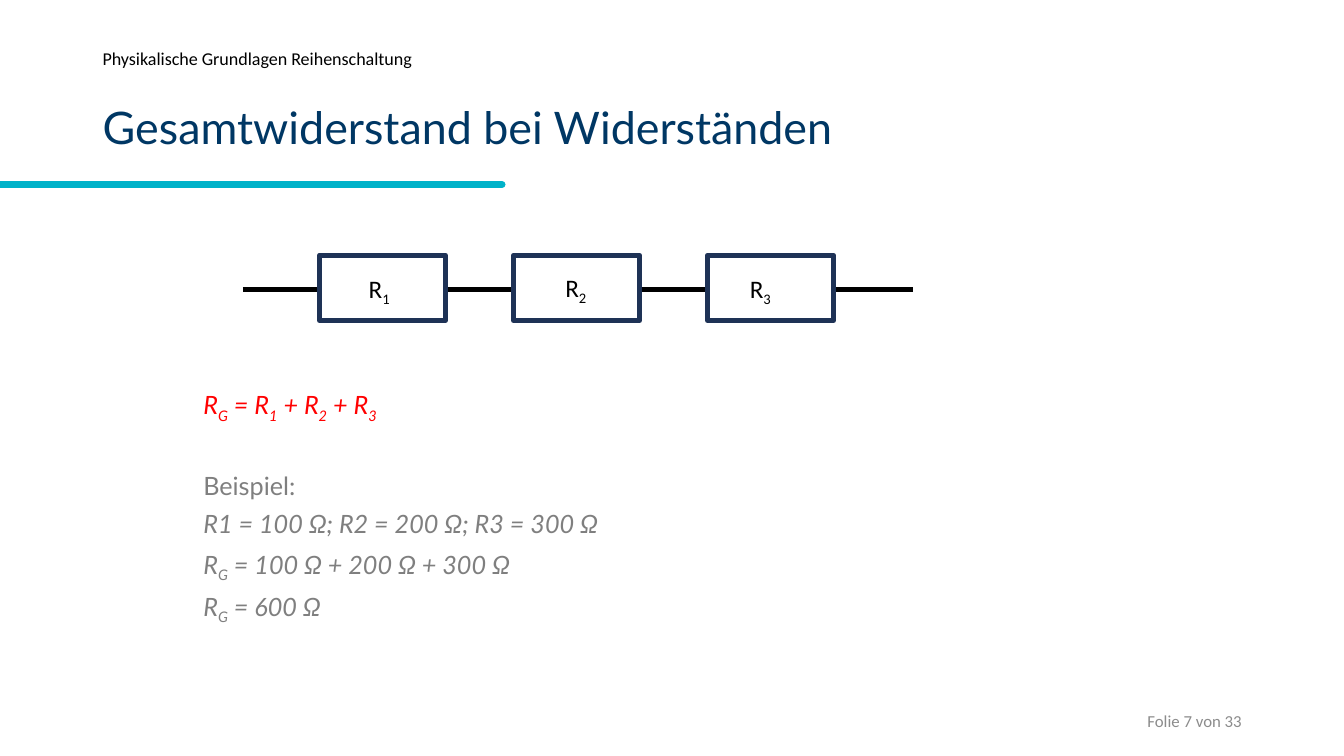
from dataclasses import dataclass

from lxml import etree
from pptx import Presentation
from pptx.dml.color import RGBColor
from pptx.enum.shapes import MSO_CONNECTOR, MSO_SHAPE
from pptx.enum.text import MSO_ANCHOR, MSO_AUTO_SIZE, PP_ALIGN
from pptx.oxml.ns import qn
from pptx.util import Pt

STRAIGHT = MSO_CONNECTOR.STRAIGHT
RECT = MSO_SHAPE.RECTANGLE
TOP, MIDDLE = MSO_ANCHOR.TOP, MSO_ANCHOR.MIDDLE
LEFT, RIGHT = PP_ALIGN.LEFT, PP_ALIGN.RIGHT
NO_FIT = MSO_AUTO_SIZE.NONE

NAVY, TEAL, RED, GREY = "003764", "00B2C9", "FF0000", "7F7F7F"
BLACK, WHITE, OUTLINE, FOOTER = "000000", "FFFFFF", "1E3256", "8C8C8C"


@dataclass
class Resistor:
    label: str
    label_x: float
    label_y: float


@dataclass
class Line:
    text: str
    color: str = GREY
    italic: bool = True
    before: float = 10


RESISTORS = [
    Resistor("R_1", 256.3, 191.5),
    Resistor("R_2", 396.7, 190.8),
    Resistor("R_3", 528.5, 191.5),
]
RESISTOR_X, RESISTOR_Y, RESISTOR_PITCH = 228.2, 182.2, 138.6
RESISTOR_W, RESISTOR_H = 90, 46.8

CALCULATION = [
    Line("R_G_ = R_1_ + R_2_ + R_3", RED, before=0),
    Line("Beispiel:", italic=False, before=40),
    Line("R1 = 100 Ω; R2 = 200 Ω; R3 = 300 Ω"),
    Line("R_G_ = 100 Ω + 200 Ω + 300 Ω"),
    Line("R_G_ = 600 Ω"),
]


def rgb(color: str) -> RGBColor:
    return RGBColor.from_string(color)


def place(sp, x: float, y: float, w: float, h: float) -> None:
    sp.left, sp.top, sp.width, sp.height = Pt(x), Pt(y), Pt(w), Pt(h)


def write(p, text: str, *, size: float, color: str, font: str = "Calibri",
          italic: bool = False, align=LEFT, spacing: float = 1,
          before: float = 0) -> None:
    p.alignment, p.line_spacing, p.space_before = align, spacing, Pt(before)
    for i, part in enumerate(text.split("_")):
        r = p.add_run()
        r.text = part
        r.font.name, r.font.size, r.font.italic = font, Pt(size), italic
        r.font.color.rgb = rgb(color)
        if i % 2:
            r._r.get_or_add_rPr().set("baseline", "-25000")


def add_box(s, x: float, y: float, w: float, h: float, anchor=TOP):
    sp = s.shapes.add_textbox(Pt(x), Pt(y), Pt(w), Pt(h))
    tf = sp.text_frame
    tf.word_wrap, tf.vertical_anchor = True, anchor
    return tf


def add_line(s, x1: float, x2: float, y: float, color: str, width: float,
             cap: str = "flat") -> None:
    c = s.shapes.add_connector(STRAIGHT, Pt(x1), Pt(y), Pt(x2), Pt(y))
    c.line.color.rgb, c.line.width = rgb(color), Pt(width)
    spPr = c._element.spPr
    spPr.find(qn("a:ln")).set("cap", cap)
    etree.SubElement(spPr, qn("a:effectLst"))


def add_header(s) -> None:
    add_line(s, -1.4, 358.6, 131.8, TEAL, 5, "rnd")
    title = s.shapes.title
    place(title, 66.2, 57.6, 828, 70.6)
    tf = title.text_frame
    tf.auto_size, tf.vertical_anchor = NO_FIT, MIDDLE
    write(tf.paragraphs[0], "Gesamtwiderstand bei Widerständen", size=32,
          color=NAVY, font="Lato", spacing=0.9)
    tf = add_box(s, 66.2, 33.1, 758.9, 20.2)
    write(tf.paragraphs[0], "Physikalische Grundlagen Reihenschaltung",
          size=12.9, color=BLACK, spacing=0.8)


def add_circuit(s) -> None:
    add_line(s, 173.5, 652.3, 206.6, BLACK, 3.5)
    for i, resistor in enumerate(RESISTORS):
        sp = s.shapes.add_shape(RECT, Pt(RESISTOR_X + i * RESISTOR_PITCH),
                                Pt(RESISTOR_Y), Pt(RESISTOR_W), Pt(RESISTOR_H))
        sp.shadow.inherit = False
        sp.fill.solid()
        sp.fill.fore_color.rgb = rgb(WHITE)
        sp.line.color.rgb, sp.line.width = rgb(OUTLINE), Pt(3.5)
    for resistor in RESISTORS:
        tf = add_box(s, resistor.label_x, resistor.label_y, 70.6, 28.8)
        write(tf.paragraphs[0], resistor.label, size=18, color=BLACK)


def add_calculation(s) -> None:
    tf = add_box(s, 138.2, 277, 619.2, 183)
    for i, line in enumerate(CALCULATION):
        p = tf.add_paragraph() if i else tf.paragraphs[0]
        write(p, line.text, size=18, color=line.color, font="Lato",
              italic=line.italic, spacing=0.8, before=line.before)


def main() -> None:
    prs = Presentation()
    prs.slide_width, prs.slide_height = Pt(960), Pt(540)
    s = prs.slides.add_slide(prs.slide_layouts[5])
    add_header(s)
    add_circuit(s)
    add_calculation(s)
    tf = add_box(s, 678.2, 500.4, 216, 28.8, MIDDLE)
    write(tf.paragraphs[0], "Folie 7 von 33", size=12, color=FOOTER, align=RIGHT)
    prs.save("out.pptx")


if __name__ == "__main__":
    main()
